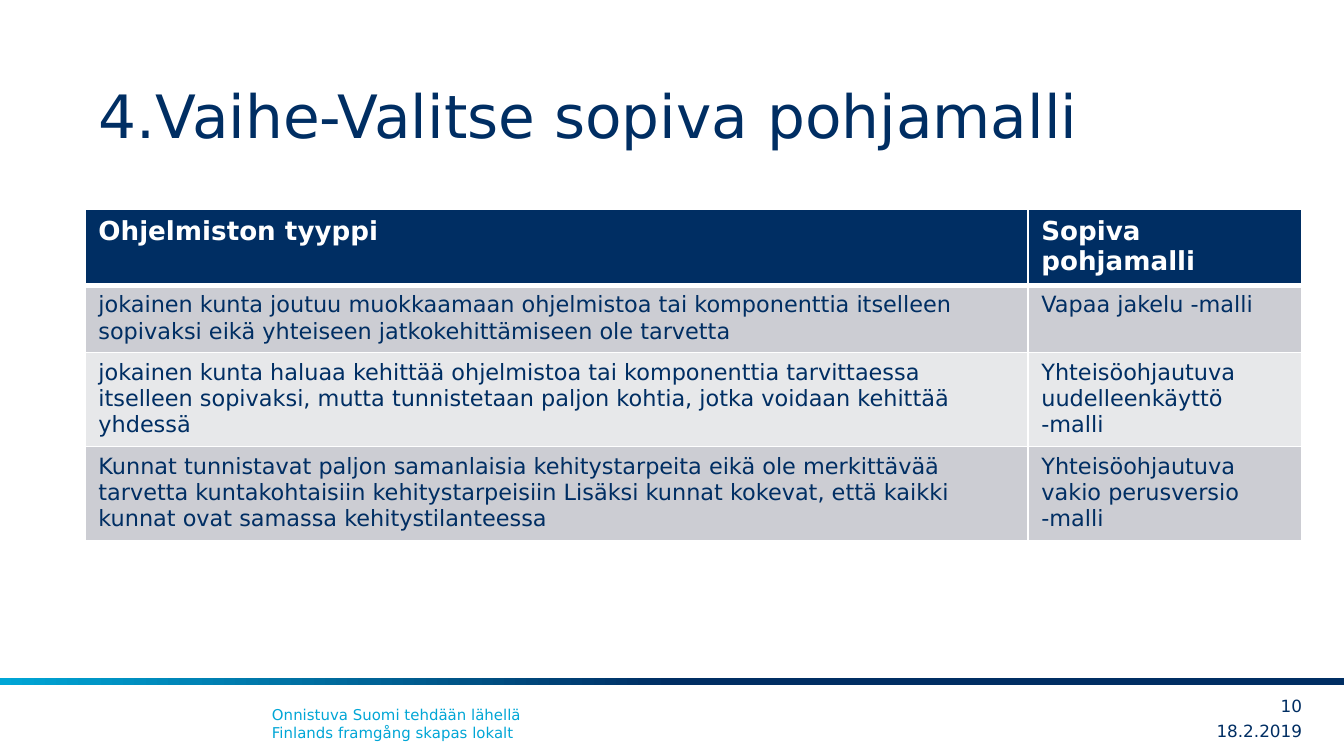
"""Build the slide on choosing a suitable template model."""
from dataclasses import dataclass

from lxml.etree import SubElement
from pptx import Presentation
from pptx.dml.color import RGBColor
from pptx.enum.shapes import MSO_SHAPE
from pptx.enum.text import MSO_ANCHOR, PP_ALIGN
from pptx.oxml.ns import qn
from pptx.util import Pt

PX = 914400 / 134.4
FONT = "DejaVu Sans"
NAVY = RGBColor(0x00, 0x2E, 0x63)
CYAN = RGBColor(0x00, 0xA6, 0xD6)
WHITE = RGBColor(0xFF, 0xFF, 0xFF)
GREY = RGBColor(0xCC, 0xCD, 0xD3)
LIGHT = RGBColor(0xE7, 0xE8, 0xEA)


@dataclass
class Label:
    text: str
    box: tuple[int, int, int, int]
    size: int
    color: RGBColor = NAVY
    align: PP_ALIGN = PP_ALIGN.LEFT
    anchor: MSO_ANCHOR = MSO_ANCHOR.MIDDLE
    inset: tuple[int, int] = (0, 0)


@dataclass
class Row:
    height: int
    fill: RGBColor
    texts: tuple[str, str]


LABELS = [
    Label("Onnistuva Suomi tehdään lähellä\vFinlands framgång skapas lokalt",
          (259, 699, 879, 50), 8, CYAN, anchor=MSO_ANCHOR.TOP, inset=(13, 7)),
    Label("4.Vaihe-Valitse sopiva pohjamalli", (99, 31, 1144, 126), 32,
          anchor=MSO_ANCHOR.BOTTOM, inset=(0, 7)),
    Label("18.2.2019", (1169, 716, 133, 30), 9, align=PP_ALIGN.RIGHT),
    Label("10", (1245, 691, 57, 30), 9, align=PP_ALIGN.RIGHT),
]

COLUMNS = (943, 274)
ROWS = [
    Row(74, NAVY, ("Ohjelmiston tyyppi", "Sopiva pohjamalli")),
    Row(66, GREY, (
        "jokainen kunta joutuu muokkaamaan ohjelmistoa tai komponenttia itselleen "
        "sopivaksi eikä yhteiseen jatkokehittämiseen ole tarvetta",
        "Vapaa jakelu -malli")),
    Row(92, LIGHT, (
        "jokainen kunta haluaa kehittää ohjelmistoa tai komponenttia tarvittaessa "
        "itselleen sopivaksi, mutta tunnistetaan paljon kohtia, jotka voidaan "
        "kehittää yhdessä",
        "Yhteisöohjautuva uudelleenkäyttö -malli")),
    Row(92, GREY, (
        "Kunnat tunnistavat paljon samanlaisia kehitystarpeita eikä ole merkittävää "
        "tarvetta kuntakohtaisiin kehitystarpeisiin Lisäksi kunnat kokevat, että "
        "kaikki kunnat ovat samassa kehitystilanteessa",
        "Yhteisöohjautuva vakio perusversio -malli")),
]


def px(n: int) -> int:
    return round(n * PX)


def write(tf, text: str, size: int, color: RGBColor, bold: bool = False,
          align: PP_ALIGN = PP_ALIGN.LEFT) -> None:
    p = tf.paragraphs[0]
    p.text = text
    p.alignment = align
    for r in p.runs:
        for key, value in {"name": FONT, "size": Pt(size), "bold": bold}.items():
            setattr(r.font, key, value)
        r.font.color.rgb = color


def add_label(s, label: Label) -> None:
    tf = s.shapes.add_textbox(*map(px, label.box)).text_frame
    x, y = map(px, label.inset)
    frame = {"word_wrap": True, "vertical_anchor": label.anchor, "margin_left": x,
             "margin_right": x, "margin_top": y, "margin_bottom": y}
    for key, value in frame.items():
        setattr(tf, key, value)
    write(tf, label.text, label.size, label.color, align=label.align)


def add_band(s) -> None:
    sp = s.shapes.add_shape(MSO_SHAPE.RECTANGLE, 0, px(678), px(1344), px(7))
    sp.shadow.inherit = False
    sp.line.fill.background()
    sp.fill.gradient()
    sp.fill.gradient_angle = 180
    for stop, position, color in zip(sp.fill.gradient_stops, (0.5, 1), (NAVY, CYAN)):
        stop.position = position
        stop.color.rgb = color


def add_borders(cell, top: int, bottom: int) -> None:
    tc_pr = cell._tc.get_or_add_tcPr()
    widths = {"lnL": 1, "lnR": 1, "lnT": top, "lnB": bottom}
    for i, (side, width) in enumerate(widths.items()):
        ln = SubElement(tc_pr, qn(f"a:{side}"), w=str(Pt(width)))
        fill = SubElement(ln, qn("a:solidFill"))
        SubElement(fill, qn("a:srgbClr"), val=str(WHITE))
        tc_pr.insert(i, ln)


def add_models(s) -> None:
    heights = [row.height for row in ROWS]
    table = s.shapes.add_table(len(ROWS), len(COLUMNS), px(85), px(209),
                               px(sum(COLUMNS)), px(sum(heights))).table
    for column, width in zip(table.columns, COLUMNS):
        column.width = px(width)
    for i, row in enumerate(ROWS):
        table.rows[i].height = px(row.height)
        head = i == 0
        for j, text in enumerate(row.texts):
            cell = table.cell(i, j)
            cell.fill.solid()
            cell.fill.fore_color.rgb = row.fill
            add_borders(cell, 3 if i == 1 else 1, 3 if head else 1)
            write(cell.text_frame, text, 14 if head else 12,
                  WHITE if head else NAVY, head)


def main() -> None:
    prs = Presentation()
    prs.slide_width, prs.slide_height = px(1344), px(756)
    s = prs.slides.add_slide(prs.slide_layouts[6])
    add_band(s)
    for label in LABELS:
        add_label(s, label)
    add_models(s)
    prs.save("out.pptx")


if __name__ == "__main__":
    main()
